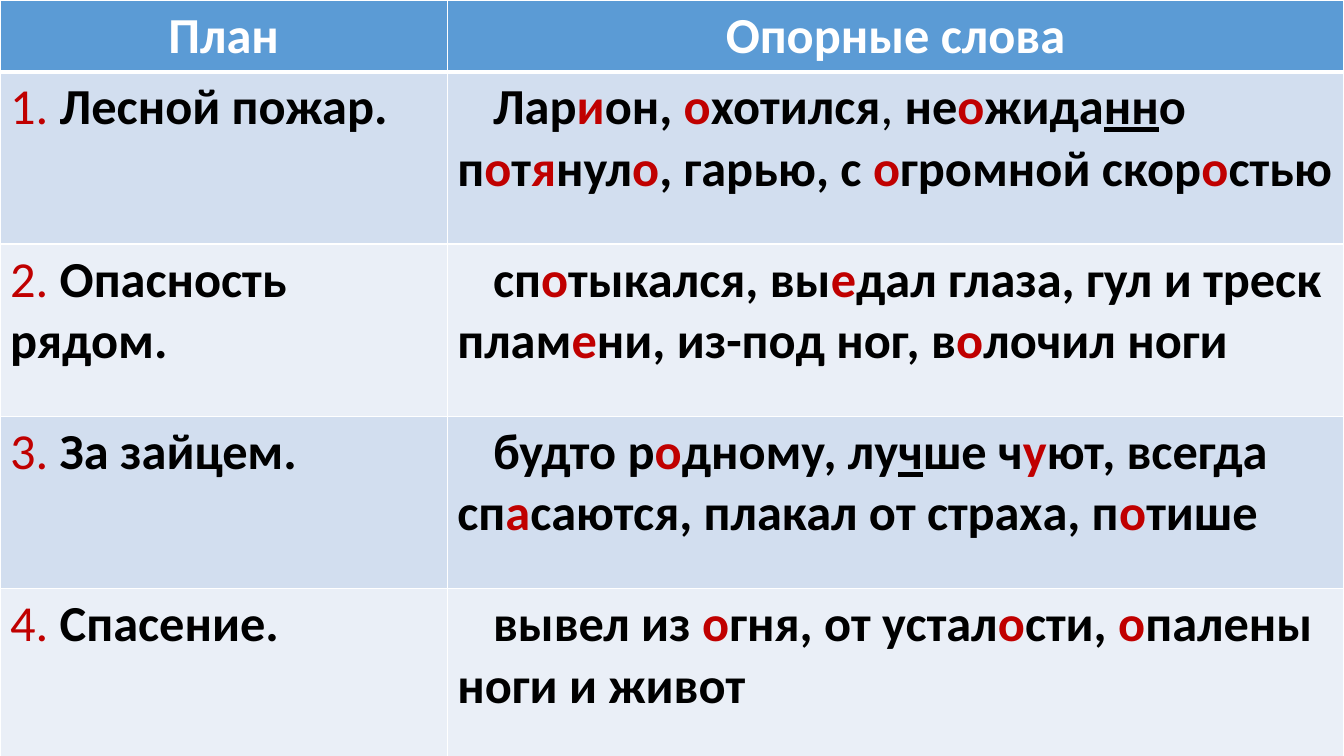
from typing import Iterator, NamedTuple

import lxml.etree
import pptx
import pptx.dml.color
import pptx.enum.text
import pptx.oxml.ns
import pptx.table
import pptx.util

EMU_PER_PX = 9525
SLIDE_WIDTH, SLIDE_HEIGHT = 1280, 720
COLUMN_WIDTHS = (426, 854)
HEADER_HEIGHT, ROW_HEIGHT = 65, 164
WORDS_INDENT = 34

WHITE, BLACK, RED = "FFFFFF", "000000", "C00000"
HEADER_FILL = "5B9BD5"
BAND_FILLS = ("D2DEEF", "EAEFF7")

RED_MARK, UNDERLINE_MARK, LIGHT_MARK = "*", "_", "~"
MARKS = RED_MARK + UNDERLINE_MARK + LIGHT_MARK


class Span(NamedTuple):
    text: str
    color: str
    bold: bool
    underline: bool


class PlanStep(NamedTuple):
    title: str
    words: str


HEADERS = ("План", "Опорные слова")
STEPS = (
    PlanStep("Лесной пожар.",
             "Лар*и*он, *о*хотился~, ~не*о*жида_нн_о п*о*т*я*нул*о*, "
             "гарью, с *о*громной скор*о*стью"),
    PlanStep("Опасность рядом.",
             "сп*о*тыкался, вы*е*дал глаза, гул и треск плам*е*ни, "
             "из-под ног, в*о*лочил ноги"),
    PlanStep("За зайцем.",
             "будто р*о*дному, лу_ч_ше ч*у*ют, всегда сп*а*саются, "
             "плакал от страха, п*о*тише"),
    PlanStep("Спасение.",
             "вывел из *о*гня, от устал*о*сти, *о*палены ноги и живот"),
)


def px(length: int) -> pptx.util.Emu:
    return pptx.util.Emu(length * EMU_PER_PX)


def rgb(color: str) -> pptx.dml.color.RGBColor:
    return pptx.dml.color.RGBColor.from_string(color)


def spans_of(marked: str, base_color: str) -> Iterator[Span]:
    """Split text at its marks; each mark switches its format on or off."""
    active: set[str] = set()
    text = ""
    for letter in marked:
        if letter not in MARKS:
            text += letter
            continue
        if text:
            yield make_span(text, base_color, active)
        text = ""
        active ^= {letter}
    if text:
        yield make_span(text, base_color, active)


def make_span(text: str, base_color: str, active: set[str]) -> Span:
    color = RED if RED_MARK in active else base_color
    return Span(text, color, LIGHT_MARK not in active, UNDERLINE_MARK in active)


def set_borders(cell: pptx.table._Cell, top: int, bottom: int) -> None:
    properties = cell._tc.get_or_add_tcPr()
    widths = {"a:lnL": 1, "a:lnR": 1, "a:lnT": top, "a:lnB": bottom}
    for position, (tag, width) in enumerate(widths.items()):
        line = lxml.etree.Element(pptx.oxml.ns.qn(tag), w=str(pptx.util.Pt(width)))
        fill = lxml.etree.SubElement(line, pptx.oxml.ns.qn("a:solidFill"))
        lxml.etree.SubElement(fill, pptx.oxml.ns.qn("a:srgbClr"), val=WHITE)
        properties.insert(position, line)


def fill_cell(cell: pptx.table._Cell, marked: str, fill: str, color: str = BLACK,
              centered: bool = False, indent: int = 0,
              top: int = 1, bottom: int = 1) -> None:
    cell.fill.solid()
    cell.fill.fore_color.rgb = rgb(fill)
    set_borders(cell, top, bottom)
    para = cell.text_frame.paragraphs[0]
    align = pptx.enum.text.PP_ALIGN
    para.alignment = align.CENTER if centered else align.LEFT
    if indent:
        para._p.get_or_add_pPr().set("indent", str(px(indent)))
    for span in spans_of(marked, color):
        run = para.add_run()
        run.text = span.text
        run.font.name = "Calibri"
        run.font.size = pptx.util.Pt(36)
        run.font.bold = span.bold
        run.font.underline = span.underline
        run.font.color.rgb = rgb(span.color)


def main() -> None:
    deck = pptx.Presentation()
    deck.slide_width, deck.slide_height = px(SLIDE_WIDTH), px(SLIDE_HEIGHT)
    page = deck.slides.add_slide(deck.slide_layouts[6])

    row_heights = [HEADER_HEIGHT] + [ROW_HEIGHT] * len(STEPS)
    table = page.shapes.add_table(
        len(row_heights), len(COLUMN_WIDTHS), px(0), px(0),
        px(sum(COLUMN_WIDTHS)), px(sum(row_heights))).table
    for column, width in zip(table.columns, COLUMN_WIDTHS):
        column.width = px(width)
    for row, height in zip(table.rows, row_heights):
        row.height = px(height)

    for index, header in enumerate(HEADERS):
        fill_cell(table.cell(0, index), header, HEADER_FILL, WHITE,
                  centered=True, bottom=3)
    for number, step in enumerate(STEPS, start=1):
        fill = BAND_FILLS[(number - 1) % len(BAND_FILLS)]
        top = 3 if number == 1 else 1
        fill_cell(table.cell(number, 0), f"*~{number}. ~*{step.title}", fill, top=top)
        fill_cell(table.cell(number, 1), step.words, fill,
                  indent=WORDS_INDENT, top=top)

    deck.save("out.pptx")


if __name__ == "__main__":
    main()
